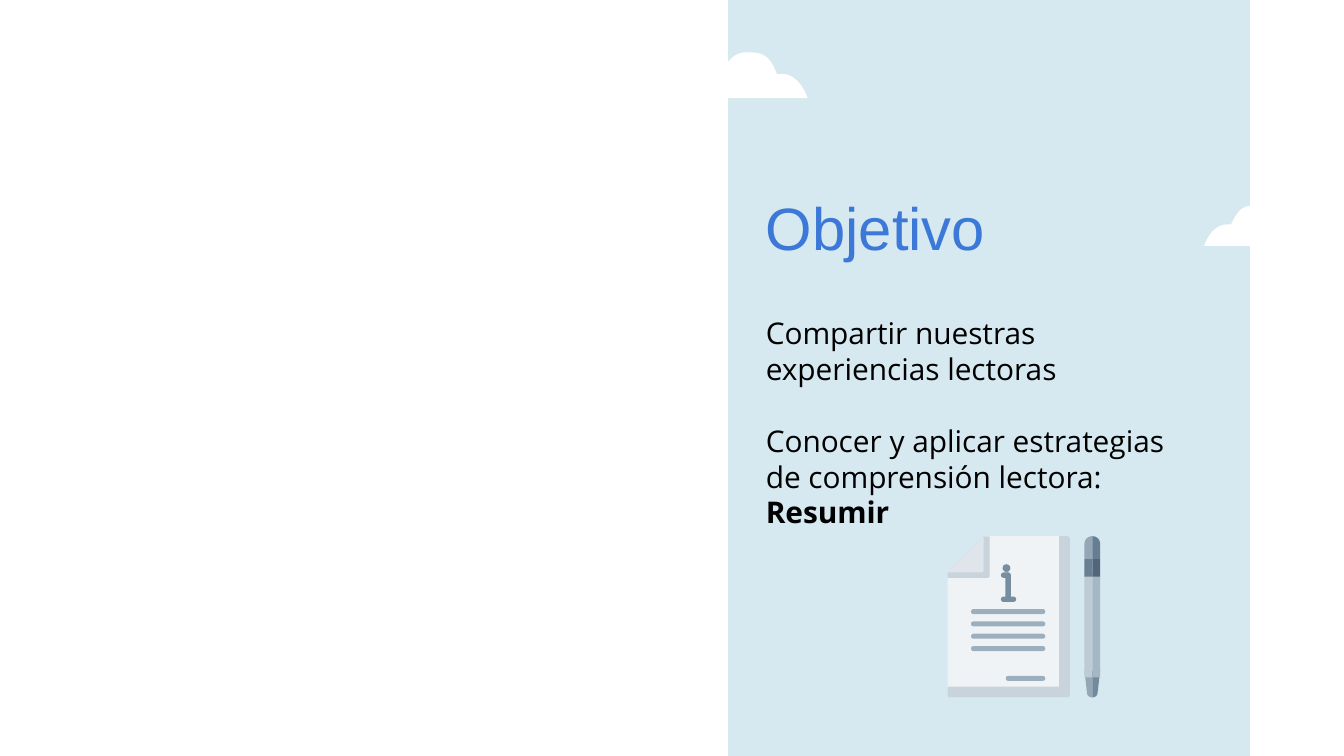
from pptx import Presentation
from pptx.dml.color import RGBColor
from pptx.enum.shapes import MSO_SHAPE
from pptx.enum.text import MSO_ANCHOR, PP_ALIGN
from pptx.util import Pt

COLORS = {
    "panel": "D6E8F0", "cloud": "FFFFFF", "title": "3C78D8", "text": "000000",
    "paper": "F0F3F5", "edge": "C8D3DC", "fold": "DFE5EA",
    "line": "9BAFBF", "info": "778DA0",
    "cap_l": "95A6B4", "cap_r": "657E93", "band_l": "6A7F91", "band_r": "51667B",
    "barrel_l": "BECBD5", "barrel_r": "A4B7C5", "tip_l": "95A6B4", "tip_r": "738A9D",
}
CURVE_STEPS = 10


def rgb(name):
    return RGBColor.from_string(COLORS[name])


def flatten(path):
    """Turn points (x, y) and cubic curves (x1, y1, x2, y2, x, y) into vertices."""
    points = [path[0]]
    for seg in path[1:]:
        if len(seg) == 2:
            points.append(seg)
            continue
        x0, y0 = points[-1]
        x1, y1, x2, y2, x3, y3 = seg
        for i in range(1, CURVE_STEPS + 1):
            t = i / CURVE_STEPS
            a, b, c, d = (1 - t) ** 3, 3 * t * (1 - t) ** 2, 3 * t * t * (1 - t), t ** 3
            points.append((a * x0 + b * x1 + c * x2 + d * x3,
                           a * y0 + b * y1 + c * y2 + d * y3))
    return [(Pt(x), Pt(y)) for x, y in points]


class Deck:
    def __init__(self, width, height):
        self.prs = Presentation()
        self.prs.slide_width, self.prs.slide_height = Pt(width), Pt(height)
        self.slide = self.prs.slides.add_slide(self.prs.slide_layouts[6])

    def paint(self, sp, color):
        sp.shadow.inherit = False
        sp.fill.solid()
        sp.fill.fore_color.rgb = rgb(color)
        sp.line.fill.background()
        return sp

    def shape(self, kind, x, y, w, h, color):
        sp = self.slide.shapes.add_shape(kind, Pt(x), Pt(y), Pt(w), Pt(h))
        return self.paint(sp, color)

    def bar(self, x, y, w, h, color):
        sp = self.shape(MSO_SHAPE.ROUNDED_RECTANGLE, x, y, w, h, color)
        sp.adjustments[0] = 0.5

    def outline(self, path, color):
        start, *rest = flatten(path)
        builder = self.slide.shapes.build_freeform(*start, scale=1.0)
        builder.add_line_segments(rest, close=True)
        self.paint(builder.convert_to_shape(), color)

    def text(self, x, y, w, h, paragraphs, font, size, color, top, line=None, gap=0):
        """Each paragraph is a list of (text, bold) runs."""
        tf = self.slide.shapes.add_textbox(Pt(x), Pt(y), Pt(w), Pt(h)).text_frame
        tf.word_wrap = True
        tf.vertical_anchor = MSO_ANCHOR.TOP
        tf.margin_left = tf.margin_right = tf.margin_bottom = Pt(7.2)
        tf.margin_top = Pt(top)
        for i, runs in enumerate(paragraphs):
            p = tf.paragraphs[0] if i == 0 else tf.add_paragraph()
            p.alignment = PP_ALIGN.LEFT
            p.font.name, p.font.size, p.font.color.rgb = font, Pt(size), rgb(color)
            if line:
                p.line_spacing = Pt(line)
            if i:
                p.space_before = Pt(gap)
            for content, bold in runs:
                r = p.add_run()
                r.text = content
                if bold:
                    r.font.bold = True


deck = Deck(720, 405)

# Panel, title and goals
deck.shape(MSO_SHAPE.FLOWCHART_PROCESS, 390.2, 0, 279.4, 405, "panel")
deck.text(403.2, 91.4, 252.7, 45.4, [[("Objetivo", False)]],
          "Arial", 32, "title", top=11)
deck.text(403.2, 159.8, 230.4, 170.6,
          [[("Compartir nuestras experiencias lectoras", False)],
           [("Conocer y aplicar estrategias de comprensión lectora: ", False),
            ("Resumir", True)]],
          "Open Sans", 16, "text", top=9, line=19.2, gap=19.2)

# Clouds on the panel's edges
deck.outline([(402.5, 28.1), (401, 28.1, 399.6, 28.1, 398.2, 28.1),
              (393.1, 28.8, 390.2, 33.1, 390.2, 33.1),
              (390.2, 33.1, 386.6, 31, 382.3, 31),
              (379.4, 31, 377.3, 31.7, 374.4, 33.1),
              (367.9, 36, 369.4, 44.6, 369.4, 44.6), (367.9, 44.6),
              (365.8, 44.6, 361.4, 46.1, 360, 52.6), (432.7, 52.6),
              (432.7, 52.6, 428.4, 39.6, 419, 39.6), (416.2, 39.6),
              (413.3, 32.4, 410.4, 28.1, 402.5, 28.1)], "cloud")
deck.outline([(671, 110.2), (664.6, 110.2, 662.4, 114.5, 659.5, 120.2), (657.4, 120.2),
              (648.7, 120.2, 645.1, 131.8, 645.1, 131.8), (707.8, 131.8),
              (706.3, 125.3, 702.7, 124.6, 700.6, 124.6), (699.1, 124.6),
              (699.1, 124.6, 701.3, 117.4, 695.5, 114.5),
              (692.6, 113, 690.5, 113, 688.3, 113),
              (684, 113, 681.1, 114.5, 681.1, 114.5),
              (681.1, 114.5, 678.2, 110.9, 674.6, 110.2)], "cloud")

# Sheet with folded corner
LEFT, RIGHT, TOP, BOTTOM = 507.6, 573.1, 287.3, 373.7
FOLD_X, FOLD_Y = 527, 306.7
bottom_corners = [(LEFT, 372.2), (LEFT, 373, 508.3, BOTTOM, 509, BOTTOM),
                  (571.7, BOTTOM), (572.4, BOTTOM, RIGHT, 373, RIGHT, 372.2)]
top_right = [(RIGHT, 288.7), (RIGHT, 288, 572.4, TOP, 571.7, TOP)]
deck.outline([(FOLD_X, TOP), (LEFT, FOLD_Y)] + bottom_corners + top_right, "paper")
deck.outline([(FOLD_X, TOP), (LEFT, FOLD_Y), (LEFT, 309.6), (528.5, 309.6),
              (529.9, 309.6, 530.2, 308.9, 530.2, 308.2), (530.2, TOP)], "edge")
deck.outline([(567.4, TOP), (567.4, 367.9), (LEFT, 367.9)] + bottom_corners + top_right,
             "edge")
deck.outline([(FOLD_X, TOP), (LEFT, FOLD_Y), (525.6, FOLD_Y),
              (526.3, FOLD_Y, FOLD_X, 306, FOLD_X, 305.3)], "fold")

# Text lines, signature line and information letter
for i in range(4):
    deck.bar(520.2, 326.3 + 6.6 * i, 39.8, 2.7, "line")
deck.bar(538.8, 362.1, 21.2, 2.7, "line")
deck.bar(536.2, 306.7, 5.2, 2.9, "info")
deck.bar(538.6, 306.7, 2.9, 15.2, "info")
deck.bar(536.2, 319.6, 8.2, 2.9, "info")
deck.shape(MSO_SHAPE.OVAL, 537.1, 302.3, 4.2, 4.2, "info")

# Pen: every part is a left and a right half around the axis
AXIS, HALF = 585.2, 4.2
for side, key in ((-1, "_l"), (1, "_r")):
    outer = AXIS + side * HALF
    deck.outline([(AXIS, 359.3), (AXIS, BOTTOM),
                  (AXIS + side, BOTTOM, AXIS + side * 2.6, 373, AXIS + side * 2.8, 371.5),
                  (outer, 359.3)], "tip" + key)
    for part, top, bottom in (("barrel", 307.4, 362.9), ("band", 299.5, 308.9)):
        deck.shape(MSO_SHAPE.RECTANGLE, min(AXIS, outer), top, HALF, bottom - top, part + key)
    deck.outline([(AXIS, TOP), (AXIS, 299.5), (outer, 299.5), (outer, 291.6),
                  (outer, 289.4, AXIS + side * 2.7, TOP, AXIS, TOP)], "cap" + key)

deck.prs.save("out.pptx")
